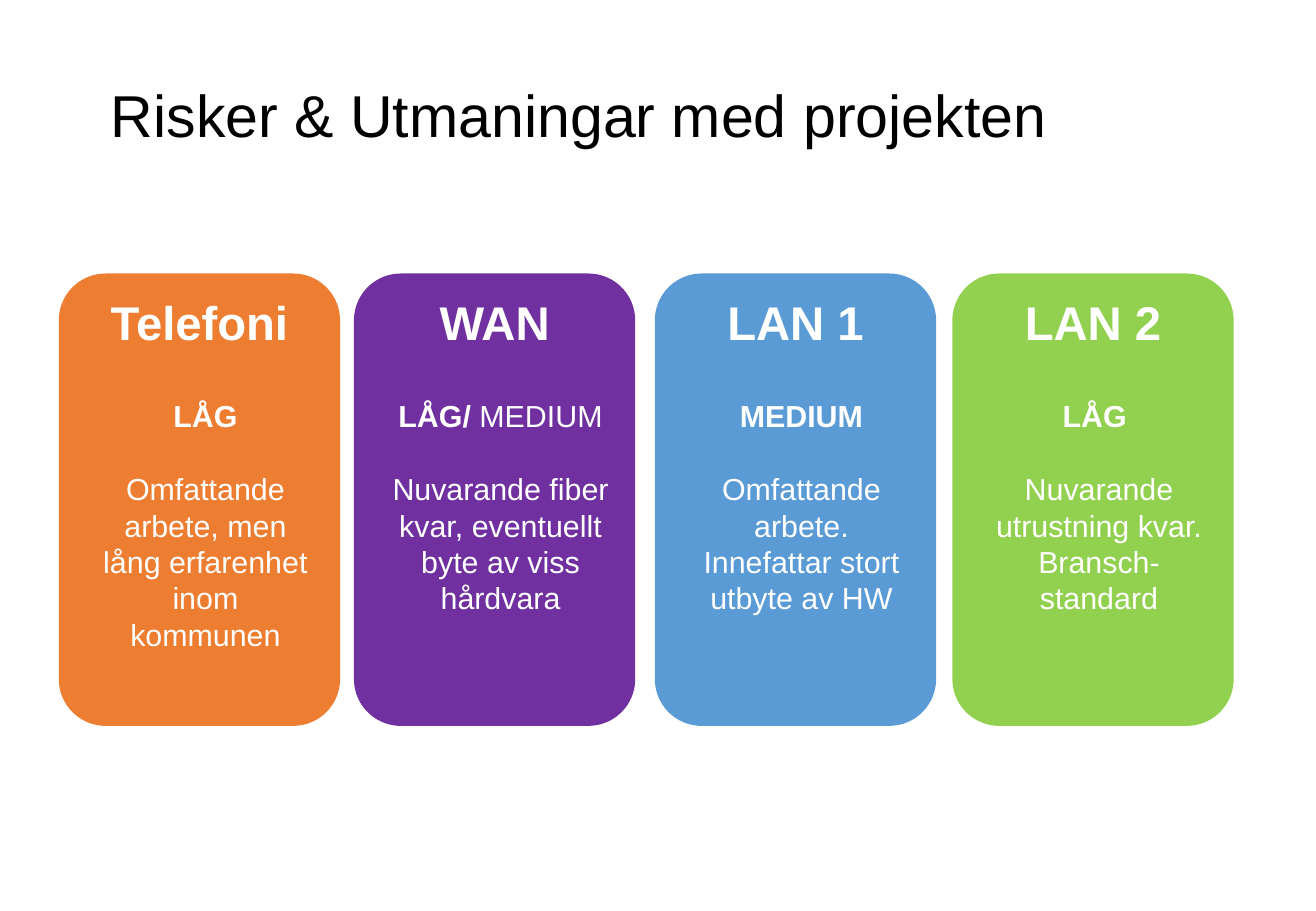
from dataclasses import dataclass

from pptx import Presentation
from pptx.dml.color import RGBColor
from pptx.enum.shapes import MSO_SHAPE
from pptx.enum.text import MSO_ANCHOR, MSO_AUTO_SIZE, PP_ALIGN
from pptx.util import Cm, Pt

# Content
TITLE = "Risker & Utmaningar med projekten"

# Left edge (cm), fill, heading, risk as (text, bold) runs, description
CARDS = [
    (1.23, "ED7D31", "Telefoni", [("LÅG", True)],
     "Omfattande arbete, men lång erfarenhet inom kommunen"),
    (7.4, "7030A0", "WAN", [("LÅG/ ", True), ("MEDIUM", False)],
     "Nuvarande fiber kvar, eventuellt byte av viss hårdvara"),
    (13.69, "5B9BD5", "LAN 1", [("MEDIUM", True)],
     "Omfattande arbete. Innefattar stort utbyte av HW"),
    (19.91, "92D050", "LAN 2", [("LÅG ", True)],
     "Nuvarande utrustning kvar. Bransch-standard"),
]


@dataclass(frozen=True)
class Theme:
    font: str = "Arial"
    title_color: str = "000000"
    card_text: str = "FFFFFF"
    title_size: int = 35
    heading_size: int = 28
    body_size: int = 18


THEME = Theme()
CARD_TOP, CARD_W, CARD_H = Cm(5.72), Cm(5.88), Cm(9.46)
BODY_INDENT = Cm(0.25)


def add_run(p, text, size, color, bold=False):
    r = p.add_run()
    r.text = text
    r.font.name = THEME.font
    r.font.size = Pt(size)
    r.font.bold = bold
    r.font.color.rgb = RGBColor.from_string(color)


def add_body(tf, runs, space_before):
    p = tf.add_paragraph()
    p.alignment = PP_ALIGN.CENTER
    p.space_before = Pt(space_before)
    p._p.get_or_add_pPr().set("marL", str(int(BODY_INDENT)))
    for text, bold in runs:
        add_run(p, text, THEME.body_size, THEME.card_text, bold)


def add_card(s, left, fill, heading, risk, description):
    sp = s.shapes.add_shape(MSO_SHAPE.ROUNDED_RECTANGLE,
                            Cm(left), CARD_TOP, CARD_W, CARD_H)
    sp.shadow.inherit = False
    sp.fill.solid()
    sp.fill.fore_color.rgb = RGBColor.from_string(fill)
    sp.line.fill.background()
    tf = sp.text_frame
    tf.word_wrap = True
    tf.vertical_anchor = MSO_ANCHOR.TOP
    tf.margin_left = tf.margin_right = Cm(0.25)
    tf.margin_top = Cm(0.13)
    p = tf.paragraphs[0]
    p.alignment = PP_ALIGN.CENTER
    add_run(p, heading, THEME.heading_size, THEME.card_text, True)
    add_body(tf, risk, 28)
    add_body(tf, [(description, False)], 21.6)


def main():
    prs = Presentation()
    prs.slide_width, prs.slide_height = Cm(27.51), Cm(19.05)
    s = prs.slides.add_slide(prs.slide_layouts[5])

    # Title
    title = s.shapes.title
    title.left, title.top = Cm(2.06), Cm(1.69)
    title.width, title.height = Cm(23.39), Cm(3.18)
    tf = title.text_frame
    tf.word_wrap = True
    tf.auto_size = MSO_AUTO_SIZE.NONE
    tf.vertical_anchor = MSO_ANCHOR.TOP
    p = tf.paragraphs[0]
    p.alignment = PP_ALIGN.LEFT
    p.line_spacing = 0.9
    add_run(p, TITLE, THEME.title_size, THEME.title_color)

    # Risk cards
    for card in CARDS:
        add_card(s, *card)

    prs.save("out.pptx")


if __name__ == "__main__":
    main()
